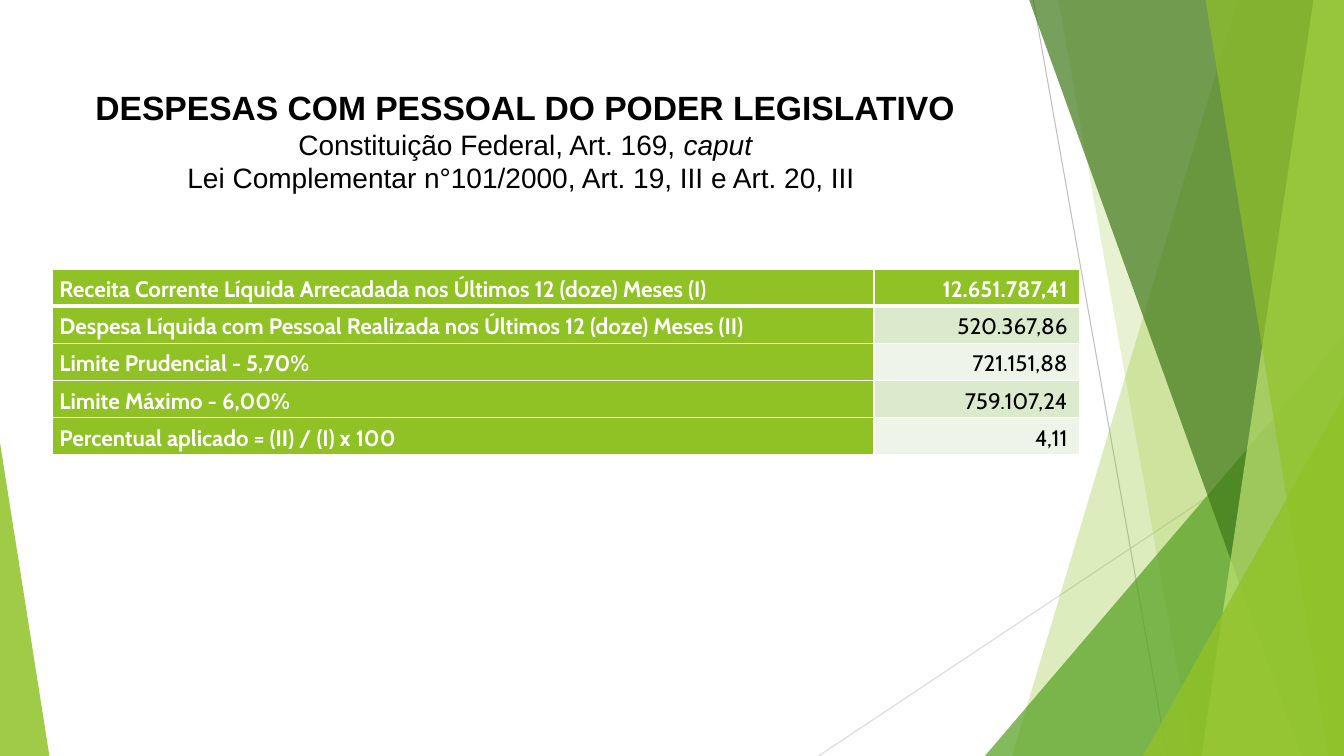
from lxml.etree import SubElement
from pptx import Presentation
from pptx.dml.color import RGBColor
from pptx.enum.shapes import MSO_CONNECTOR, MSO_SHAPE
from pptx.enum.text import MSO_ANCHOR, MSO_AUTO_SIZE, PP_ALIGN
from pptx.oxml.ns import qn
from pptx.util import Inches, Pt

LIME, WHITE, BLACK = "90C226", "FFFFFF", "000000"


def tint(code):
    """Turn a hex string into a colour."""
    return RGBColor.from_string(code)


class Deck:
    """Draws on one slide; lengths are percent of its width or height."""

    def __init__(self):
        """Open a wide deck with a title-only slide."""
        self.file = Presentation()
        self.file.slide_width, self.file.slide_height = Inches(13.33), Inches(7.5)
        self.page = self.file.slides.add_slide(self.file.slide_layouts[5])
        self.items = self.page.shapes

    def across(self, share):
        """Give a share of the width."""
        return round(self.file.slide_width * share / 100)

    def down(self, share):
        """Give a share of the height."""
        return round(self.file.slide_height * share / 100)

    def frame(self, left, top, width, height):
        """Give a box in slide units."""
        return self.across(left), self.down(top), self.across(width), self.down(height)

    def paint(self, shape, code, alpha):
        """Fill a shape with a see-through colour and no outline."""
        shape.shadow.inherit = False
        shape.line.fill.background()
        shape.fill.solid()
        shape.fill.fore_color.rgb = tint(code)
        mark = shape.fill._xPr.find(".//" + qn("a:srgbClr"))
        SubElement(mark, qn("a:alpha"), val=str(alpha * 1000))

    def line(self, start, end, code):
        """Draw a thin straight line."""
        (left, top), (right, base) = start, end
        rule = self.items.add_connector(
            MSO_CONNECTOR.STRAIGHT, self.across(left), self.down(top),
            self.across(right), self.down(base))
        rule.line.color.rgb = tint(code)
        rule.line.width = Pt(0.75)
        SubElement(rule._element.spPr, qn("a:effectLst"))

    def band(self, top, base, code, alpha):
        """Draw a full-height band with a slanted left edge."""
        spots = [(self.across(x), self.down(y))
                 for x, y in ((top, 0), (100, 0), (100, 100), (base, 100))]
        pen = self.items.build_freeform(*spots[0])
        pen.add_line_segments(spots[1:], close=True)
        self.paint(pen.convert_to_shape(), code, alpha)

    def wedge(self, left, top, width, peak, code, alpha):
        """Draw a right triangle that stands on the lower edge."""
        shape = self.items.add_shape(
            MSO_SHAPE.ISOSCELES_TRIANGLE, *self.frame(left, top, width, 100 - top))
        shape.adjustments[0] = peak
        self.paint(shape, code, alpha)

    def text(self, para, words, size, face, code, bold=False, slant=False):
        """Add one run to a paragraph."""
        font = para.add_run()
        font.text, font = words, font.font
        font.size, font.name, font.bold, font.italic = Pt(size), face, bold, slant
        font.color.rgb = tint(code)

    def title(self, box, lines):
        """Place the title and write its lines of runs."""
        shape = self.items.title
        shape.left, shape.top, shape.width, shape.height = self.frame(*box)
        body = shape.text_frame
        body.word_wrap, body.auto_size = True, MSO_AUTO_SIZE.NONE
        body.vertical_anchor, body.margin_top = MSO_ANCHOR.TOP, Inches(0.03)
        for spot, runs in enumerate(lines):
            para = body.add_paragraph() if spot else body.paragraphs[0]
            para.alignment = PP_ALIGN.CENTER
            para.space_before = Pt(0)
            for words, size, bold, slant in runs:
                self.text(para, words, size, "Arial", BLACK, bold, slant)

    def edge(self, cell, side, width):
        """Draw one white side of a cell."""
        rule = SubElement(cell._tc.get_or_add_tcPr(), qn("a:ln" + side),
                          w=str(Pt(width)))
        fill = SubElement(rule, qn("a:solidFill"))
        SubElement(fill, qn("a:srgbClr"), val=WHITE)

    def cell(self, cell, words, fill, head, right, sides):
        """Write and style one table cell."""
        for side, width in zip("LRTB", sides):
            self.edge(cell, side, width)
        cell.fill.solid()
        cell.fill.fore_color.rgb = tint(fill)
        cell.vertical_anchor = MSO_ANCHOR.MIDDLE
        cell.margin_left = cell.margin_right = Inches(0.07)
        cell.margin_top = cell.margin_bottom = Inches(0.01)
        para = cell.text_frame.paragraphs[0]
        para.alignment = PP_ALIGN.RIGHT if right else PP_ALIGN.LEFT
        para.line_spacing = 1.15
        self.text(para, words, 16, "Cabin", WHITE if head else BLACK, head)

    def table(self, left, top, widths, height, rows):
        """Add a table with a green head row and first column."""
        grid = self.items.add_table(
            len(rows), len(widths),
            *self.frame(left, top, sum(widths), height * len(rows))).table
        grid.first_col, grid.horz_banding = True, False
        for spot, width in enumerate(widths):
            grid.columns[spot].width = self.across(width)
        for row, texts in enumerate(rows):
            grid.rows[row].height = self.down(height)
            sides = 1, 1, 3 if row == 1 else 1, 3 if row == 0 else 1
            for col, words in enumerate(texts):
                head = row == 0 or col == 0
                fill = LIME if head else ("EEF4E8", "DBE9CD")[row % 2]
                self.cell(grid.cell(row, col), words, fill, head, col == 1, sides)


def main():
    """Build the slide and save it."""
    deck = Deck()
    deck.line((76.88, 0), (86.85, 100), "BFBFBF")
    deck.line((100, 53.73), (60.9, 100), "D9D9D9")
    deck.band(92.1, 75.3, LIME, 30)
    deck.band(78.75, 88.73, LIME, 20)
    deck.wedge(73.28, 44.4, 26.72, 1, "54A021", 72)
    deck.band(76.58, 96.83, "3F7819", 70)
    deck.band(97.73, 89.4, "C0E474", 70)
    deck.band(89.7, 98.85, LIME, 65)
    deck.wedge(85.05, 52.4, 14.95, 1, LIME, 80)
    deck.wedge(0, 58.53, 3.68, 0, LIME, 85)
    deck.table(3.9, 35.6, (61.13, 15.3), 4.91, (
        ("Receita Corrente Líquida Arrecadada nos Últimos 12 (doze) Meses (I)",
         "12.651.787,41 "),
        ("Despesa Líquida com Pessoal Realizada nos Últimos 12 (doze) Meses (II)",
         "520.367,86 "),
        ("Limite Prudencial - 5,70%", "721.151,88 "),
        ("Limite Máximo - 6,00%", "759.107,24 "),
        ("Percentual aplicado = (II) / (I) x 100", "4,11 ")))
    deck.title((6.08, 11.07, 66, 22.27), (
        [("DESPESAS COM PESSOAL DO PODER LEGISLATIVO", 24, True, False)],
        [("Constituição Federal, Art. 169, ", 20, False, False),
         ("caput", 20, False, True)],
        [("Lei Complementar n°101/2000, Art. 19, III e Art. 20, III ",
          20, False, False)]))
    deck.file.save("out.pptx")


if __name__ == "__main__":
    main()
